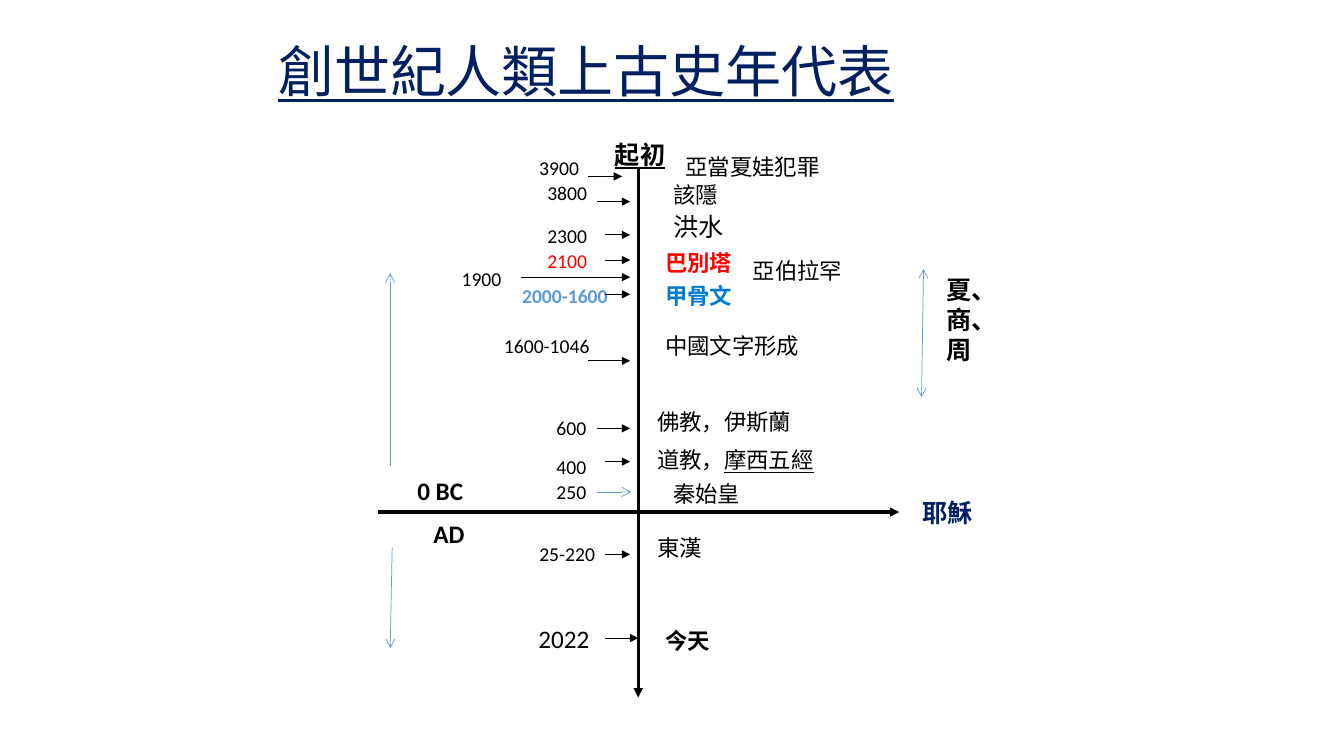
from lxml import etree
from pptx import Presentation
from pptx.dml.color import RGBColor
from pptx.enum import shapes, text
from pptx.oxml import ns
from pptx.util import Inches, Pt

COLORS = {"black": "000000", "navy": "002060", "red": "FF0000",
          "blue": "007BD3", "sky": "5B9BD5"}
LATIN, CHINESE = "Calibri", "Noto Sans CJK TC"
AXIS_X, ZERO_Y = 6.33, 5.08

DATES = [
    ("3900", 5.25, 1.5, {}),
    ("3800", 5.33, 1.75, {}),
    ("2300", 5.33, 2.17, {}),
    ("2100", 5.33, 2.42, {"color": "red"}),
    ("1900", 4.48, 2.6, {}),
    ("2000-1600", 5.08, 2.77, {"color": "sky", "bold": True}),
    ("1600-1046", 4.9, 3.26, {}),
    ("600", 5.42, 4.08, {}),
    ("400", 5.42, 4.46, {}),
    ("250", 5.42, 4.71, {}),
    ("25-220", 5.25, 5.33, {}),
    ("2022", 5.24, 6.13, {"size": 18}),
]
EVENTS = [
    ("亞當夏娃犯罪", 6.7, 1.47, {}),
    ("該隱", 6.58, 1.75, {}),
    ("洪水", 6.58, 2.05, {"size": 18}),
    ("巴別塔", 6.5, 2.42, {"color": "red", "bold": True}),
    ("亞伯拉罕", 7.37, 2.5, {}),
    ("甲骨文", 6.5, 2.75, {"color": "blue", "bold": True}),
    ("中國文字形成", 6.5, 3.25, {}),
    ("佛教，伊斯蘭", 6.42, 4, {}),
    ("秦始皇", 6.58, 4.71, {}),
    ("東漢", 6.42, 5.25, {}),
    ("今天", 6.5, 6.17, {"bold": True}),
]
DATE_ARROWS = [
    (5.83, 6.17, 1.75), (5.92, 6.25, 2), (6, 6.25, 2.33), (6, 6.25, 2.58),
    (5.17, 6.25, 2.75), (6, 6.25, 2.92), (5.83, 6.25, 3.58), (5.92, 6.25, 4.25),
    (6, 6.25, 4.58), (6, 6.25, 5.5), (6, AXIS_X, 6.33),
]
ERA_ARROWS = [
    (3.87, 4.62, 3.87, 2.71), (3.89, 5.43, 3.87, 6.43), (5.92, 4.88, 6.26, 4.88),
]


def text_width(content, size):
    ems = sum(0.31 if letter == "-" else 0.51 if letter.isascii() else 1
              for letter in content)
    return 0.2 + ems * size / 72


def add_label(slide, content, left, top, size=16, color="black", bold=False,
              underline=False, width=None, height=None, underlined_end=""):
    full_text = content + underlined_end
    box = slide.shapes.add_textbox(
        Inches(left), Inches(top), Inches(width or text_width(full_text, size)),
        Inches(height or 0.1 + size / 60))
    frame = box.text_frame
    frame.word_wrap = width is not None
    if height is None:
        frame.auto_size = text.MSO_AUTO_SIZE.SHAPE_TO_FIT_TEXT
    paragraph = frame.paragraphs[0]
    paragraph.add_run().text = content
    if underlined_end:
        run = paragraph.add_run()
        run.text = underlined_end
        run.font.underline = True
    font = paragraph.font
    font.size = Pt(size)
    font.bold = bold
    if underline:
        font.underline = True
    font.color.rgb = RGBColor.from_string(COLORS[color])
    font.name = LATIN if full_text.isascii() else CHINESE
    latin = paragraph._p.find(".//" + ns.qn("a:latin"))
    east_asian = etree.Element(ns.qn("a:ea"), typeface=CHINESE)
    latin.addnext(east_asian)
    return box


def add_arrow(slide, start_x, start_y, end_x, end_y, width=0.75, color="black",
              tip="triangle", both_ends=False):
    connector = slide.shapes.add_connector(
        shapes.MSO_CONNECTOR.STRAIGHT, Inches(start_x), Inches(start_y),
        Inches(end_x), Inches(end_y))
    connector.line.width = Pt(width)
    connector.line.color.rgb = RGBColor.from_string(COLORS[color])
    outline = connector.line._get_or_add_ln()
    for end in ["headEnd", "tailEnd"] if both_ends else ["tailEnd"]:
        etree.SubElement(outline, ns.qn("a:" + end), type=tip)
    etree.SubElement(connector._element.spPr, ns.qn("a:effectLst"))


def add_title(slide):
    title = add_label(slide, "創世紀人類上古史年代表", 2.66, 0.3, size=40,
                      color="navy", underline=True, width=8.51, height=0.87)
    title.text_frame.vertical_anchor = text.MSO_ANCHOR.MIDDLE
    title.text_frame.paragraphs[0].line_spacing = 0.9


def add_axes(slide):
    add_arrow(slide, AXIS_X, 1.67, AXIS_X, 6.92, width=2.25)
    add_arrow(slide, 3.75, ZERO_Y, 8.92, ZERO_Y, width=2.25)
    add_label(slide, "起初", 6, 1.33, size=18, bold=True, underline=True, width=0.77)
    add_label(slide, "耶穌", 9.05, 4.88, size=18, color="navy", bold=True)
    add_label(slide, "0 BC", 4.04, 4.67, size=18, bold=True, width=0.75)
    add_label(slide, "AD", 4.2, 5.09, size=18, bold=True, width=0.69)


def add_eras(slide):
    for ends in ERA_ARROWS:
        add_arrow(slide, *ends, width=0.5, color="sky", tip="arrow")
    add_arrow(slide, 9.16, 2.67, 9.14, 3.94, width=0.5, color="sky",
              tip="arrow", both_ends=True)
    add_label(slide, "夏、商、周", 9.29, 2.67, size=18, bold=True, width=0.7, height=1.01)


def main():
    presentation = Presentation()
    presentation.slide_width = Inches(13.33)
    presentation.slide_height = Inches(7.5)
    slide = presentation.slides.add_slide(presentation.slide_layouts[6])
    add_title(slide)
    add_axes(slide)
    for date, left, top, style in DATES:
        add_label(slide, date, left, top, **{"size": 14, **style})
    for event, left, top, style in EVENTS:
        add_label(slide, event, left, top, **style)
    add_label(slide, "道教，", 6.42, 4.38, underlined_end="摩西五經")
    for start_x, end_x, y in DATE_ARROWS:
        add_arrow(slide, start_x, y, end_x, y)
    add_eras(slide)
    presentation.save("out.pptx")


if __name__ == "__main__":
    main()
